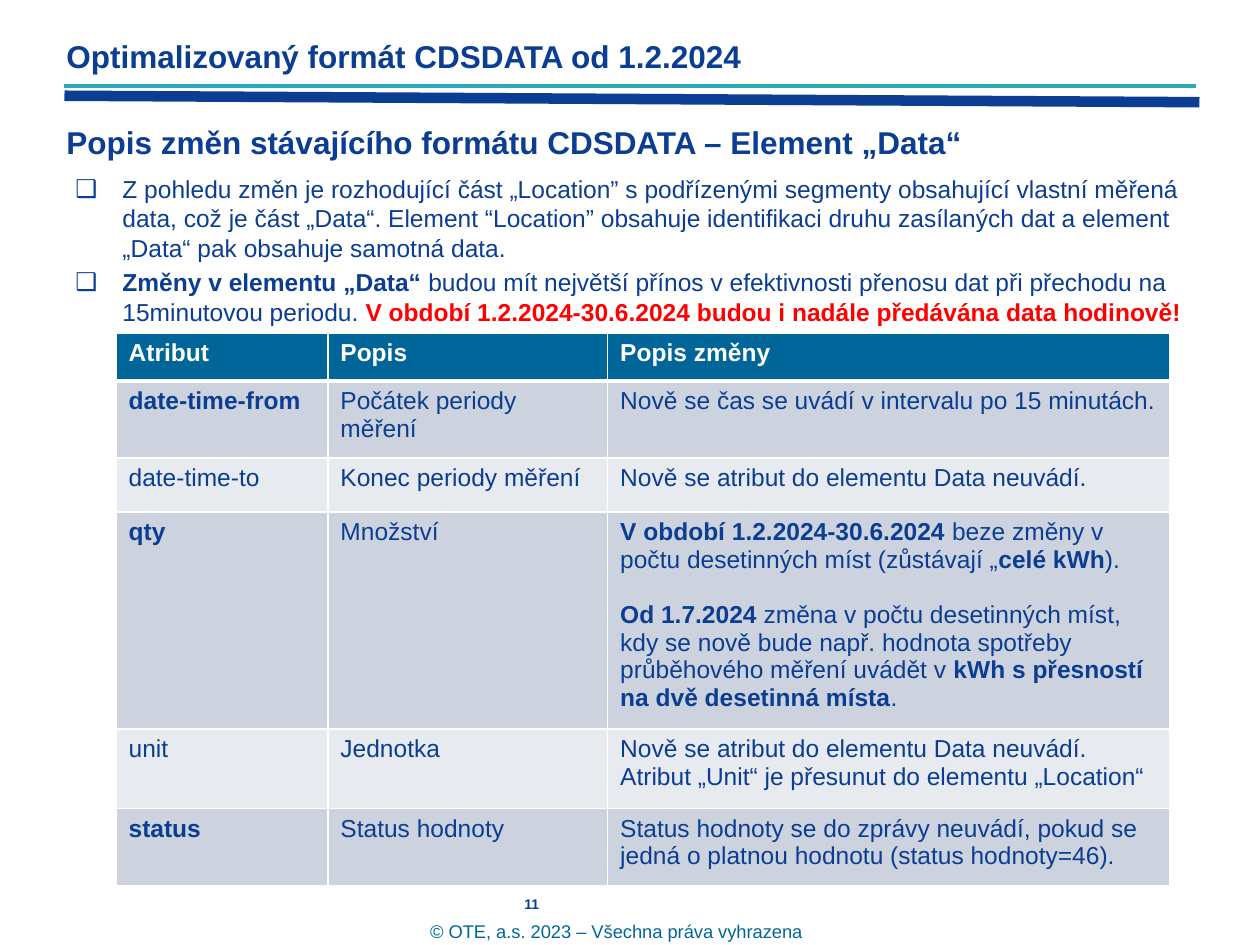
from lxml import etree
from pptx import Presentation, util as u
from pptx.dml.color import RGBColor
from pptx.enum import shapes, text
from pptx.oxml import ns

HUE = {"navy": "0B3D92", "teal": "28ABB7", "head": "006699", "red": "FF0000",
       "white": "FFFFFF", "dark": "CCD3DE", "light": "E7EAEF"}

# Text between asterisks is bold
ROWS = [
    ["*Atribut*", "*Popis*", "*Popis změny*"],
    ["*date-time-from*", "Počátek periody měření",
     "Nově se čas se uvádí v\u00a0intervalu po 15 minutách."],
    ["date-time-to", "Konec periody měření",
     "Nově se atribut do elementu Data neuvádí."],
    ["*qty*", "Množství",
     "*V období 1.2.2024-30.6.2024 *beze změny v počtu desetinných míst "
     "(zůstávají „*celé kWh*).\n"
     "*Od 1.7.2024 *změna v\u00a0počtu desetinných míst, kdy se nově bude např. "
     "hodnota spotřeby průběhového měření uvádět v\u00a0"
     "*kWh s přesností na dvě desetinná místa*."],
    ["unit", "Jednotka",
     "Nově se atribut do elementu Data neuvádí. "
     "Atribut „Unit“ je přesunut do elementu „Location“"],
    ["*status*", "Status hodnoty",
     "Status hodnoty se do zprávy neuvádí, pokud se jedná o platnou hodnotu "
     "(status hodnoty=46)."],
]
COLS = [4.27, 5.64, 11.33]
TALL = [0.97, 1.55, 1.09, 4.37, 1.6, 1.55]


def rgb(name):
    return RGBColor.from_string(HUE[name])


def sub(node, tag, **attrs):
    return etree.SubElement(node, ns.qn(tag), attrs)


def add(par, words, size, hue="navy", bold=False):
    run = par.add_run()
    run.text = words
    font = run.font
    font.name, font.size, font.bold = "Arial", u.Pt(size), bold
    font.color.rgb = rgb(hue)


def mark(par, words, size, hue="navy"):
    for i, part in enumerate(words.split("*")):
        if part:
            add(par, part, size, hue, i % 2 == 1)


def area(slide, box):
    frame = slide.shapes.add_textbox(*map(u.Cm, box)).text_frame
    frame.word_wrap = True
    return frame


def title(slide, box, words):
    par = area(slide, box).paragraphs[0]
    par.line_spacing = 0.9
    add(par, words, 18, bold=True)


def rules(slide, box):
    x, y, w, h = box
    # Slanted navy bar, then the level teal line above it
    for top, end, wide, hue, size in [(0.2, h, w, "navy", 6),
                                      (0, 0, w - 0.08, "teal", 2)]:
        line = slide.shapes.add_connector(
            shapes.MSO_CONNECTOR.STRAIGHT,
            *map(u.Cm, (x, y + top, x + wide, y + end)))
        line.line.color.rgb = rgb(hue)
        line.line.width = u.Pt(size)
        sub(line._element.spPr, "a:effectLst")


def bullet(par):
    prop = par._p.get_or_add_pPr()
    prop.set("marL", str(u.Cm(0.95)))
    prop.set("indent", str(-u.Cm(0.95)))
    sub(sub(prop, "a:buClr"), "a:srgbClr", val=HUE["navy"])
    sub(prop, "a:buFont", typeface="Arial")
    sub(prop, "a:buChar", char="❑")


def body(slide, box):
    frame = area(slide, box)
    par = frame.paragraphs[0]
    bullet(par)
    mark(par, "Z pohledu změn je rozhodující část „Location” s podřízenými "
         "segmenty obsahující vlastní měřená data, což je část „Data“. Element "
         "“Location” obsahuje identifikaci druhu zasílaných dat a element "
         "„Data“ pak obsahuje samotná data.", 14)
    par = frame.add_paragraph()
    bullet(par)
    par.space_before = u.Pt(3)
    mark(par, "*Změny v elementu „Data“ *budou mít největší přínos v efektivnosti "
         "přenosu dat při přechodu na 15minutovou periodu. ", 14)
    add(par, "V období 1.2.2024-30.6.2024 budou i nadále předávána data hodinově!",
        14, "red", True)


def edge(cell, row):
    prop = cell._tc.get_or_add_tcPr()
    for i, side in enumerate("LRTB"):
        thick = (row, side) in [(0, "B"), (1, "T")]
        line = etree.Element(ns.qn("a:ln" + side), w=str(u.Pt(3 if thick else 1)))
        sub(sub(line, "a:solidFill"), "a:srgbClr", val=HUE["white"])
        prop.insert(i, line)


def grid(slide, box):
    table = slide.shapes.add_table(len(ROWS), len(COLS), *map(u.Cm, box)).table
    for col, wide in zip(table.columns, COLS):
        col.width = u.Cm(wide)
    for r, (row, tall) in enumerate(zip(ROWS, TALL)):
        table.rows[r].height = u.Cm(tall)
        shade = "head" if r == 0 else ("light", "dark")[r % 2]
        for c, words in enumerate(row):
            cell = table.cell(r, c)
            cell.fill.solid()
            cell.fill.fore_color.rgb = rgb(shade)
            edge(cell, r)
            frame = cell.text_frame
            for i, part in enumerate(words.split("\n")):
                par = frame.add_paragraph() if i else frame.paragraphs[0]
                if i:
                    par.space_before = u.Pt(16)
                mark(par, part, 14, "navy" if r else "white")


def number(slide, box):
    bar = slide.shapes.add_shape(shapes.MSO_SHAPE.RECTANGLE, *map(u.Cm, box))
    bar.shadow.inherit = False
    bar.fill.solid()
    bar.fill.fore_color.rgb = rgb("white")
    bar.line.fill.background()
    frame = bar.text_frame
    frame.margin_top = frame.margin_bottom = 0
    frame.margin_right = u.Cm(4.5)  # moves the number left of centre
    frame.vertical_anchor = text.MSO_ANCHOR.MIDDLE
    par = frame.paragraphs[0]
    par.alignment = text.PP_ALIGN.CENTER
    add(par, "11", 8, bold=True)


def foot(slide, box):
    par = area(slide, box).paragraphs[0]
    par.alignment = text.PP_ALIGN.CENTER
    add(par, "© OTE, a.s. 2023 – Všechna práva vyhrazena", 10.5, "head")


def main():
    deck = Presentation()
    deck.slide_width, deck.slide_height = u.Cm(25.4), u.Cm(19.05)
    slide = deck.slides.add_slide(deck.slide_layouts[6])
    # Header
    rules(slide, (1.3, 1.73, 22.88, 0.33))
    title(slide, (1.09, 0.71, 20.5, 1.4), "Optimalizovaný formát CDSDATA od 1.2.2024")
    # Footer bar, below the content
    number(slide, (1.35, 17.93, 22.99, 0.58))
    # Content
    title(slide, (1.09, 2.44, 20.5, 1.4),
          "Popis změn stávajícího formátu CDSDATA – Element „Data“")
    body(slide, (1.27, 3.38, 23.27, 15.67))
    grid(slide, (2.34, 6.71, sum(COLS), sum(TALL)))
    # Copyright
    foot(slide, (1.8, 18.42, 21.26, 0.63))
    deck.save("out.pptx")


if __name__ == "__main__":
    main()
